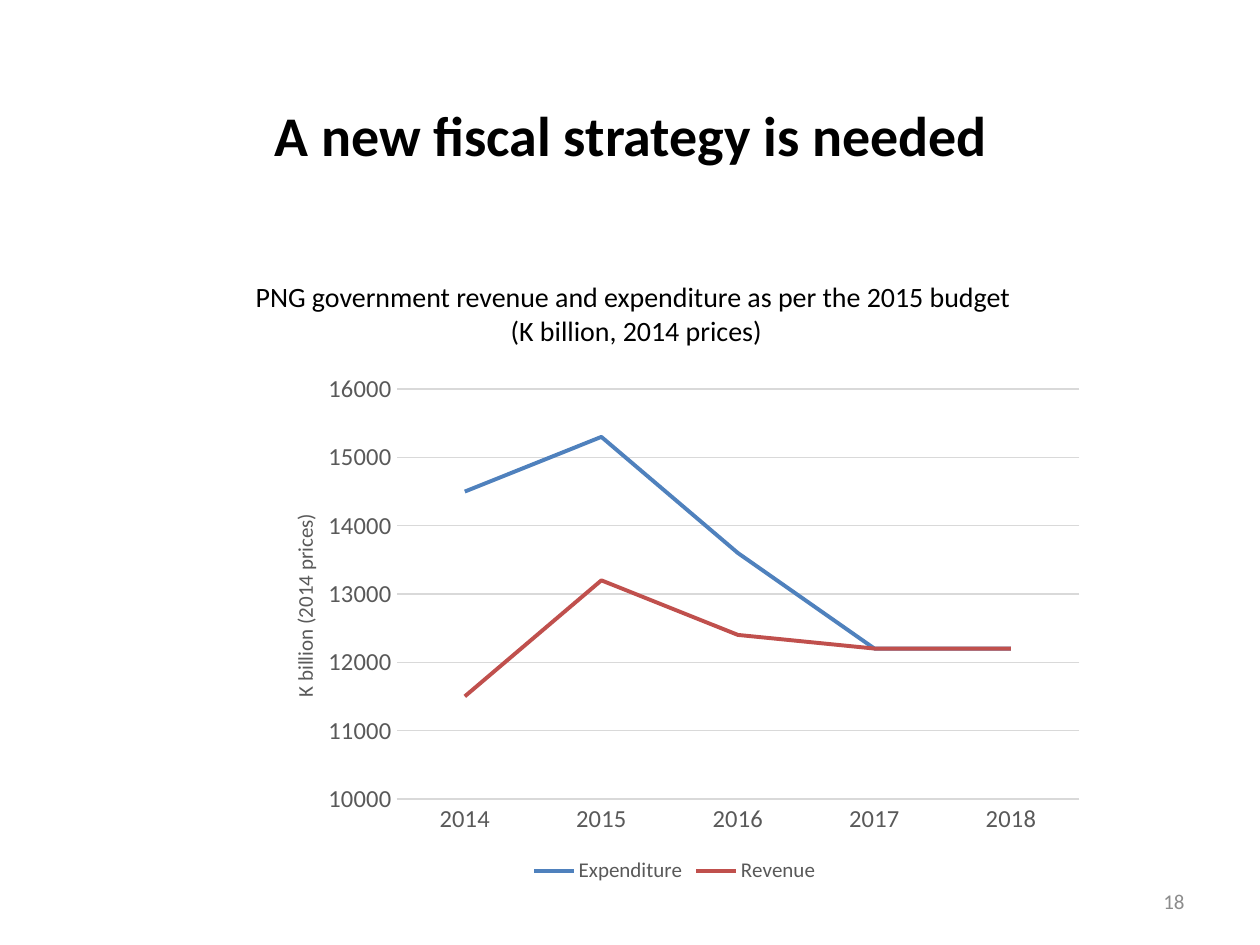
from lxml import etree
from pptx import Presentation
from pptx.chart.data import CategoryChartData
from pptx.dml.color import RGBColor
from pptx.enum.chart import XL_CHART_TYPE, XL_LEGEND_POSITION, XL_TICK_MARK
from pptx.enum.text import MSO_ANCHOR, PP_ALIGN
from pptx.oxml.ns import qn
from pptx.util import Inches, Pt

FONT = "Calibri"
COLORS = {
    "text": "000000",
    "number": "8C8C8C",
    "label": "595959",
    "grid": "D9D9D9",
    "Expenditure": "4F81BD",
    "Revenue": "C0504D",
}
YEARS = ["2014", "2015", "2016", "2017", "2018"]
BUDGET = {
    "Expenditure": [14500, 15300, 13600, 12200, 12200],
    "Revenue": [11500, 13200, 12400, 12200, 12200],
}


def rgb(name):
    return RGBColor.from_string(COLORS[name])


def style_font(font, size, color, bold=False):
    font.name = FONT
    font.size = Pt(size)
    font.bold = bold
    font.color.rgb = rgb(color)


def style_line(line, color, width):
    line.color.rgb = rgb(color)
    line.width = Pt(width)


def add_text(s, box, lines, size, color="text", align=PP_ALIGN.CENTER, bold=False):
    tf = s.shapes.add_textbox(*map(Inches, box)).text_frame
    tf.word_wrap = True
    tf.vertical_anchor = MSO_ANCHOR.MIDDLE
    p = tf.paragraphs[0]
    p.alignment = align
    for i, line in enumerate(lines):
        if i:
            p.add_line_break()
        r = p.add_run()
        r.text = line
        style_font(r.font, size, color, bold)


def set_layout(parent, index, **settings):
    layout = parent.find(qn("c:layout"))
    if layout is None:
        layout = etree.Element(qn("c:layout"))
        parent.insert(index, layout)
    manual = etree.SubElement(layout, qn("c:manualLayout"))
    for tag, value in settings.items():
        etree.SubElement(manual, qn(f"c:{tag}")).set("val", str(value))


def style_category_axis(axis):
    axis.major_tick_mark = axis.minor_tick_mark = XL_TICK_MARK.NONE
    style_font(axis.tick_labels.font, 14, "label")
    style_line(axis.format.line, "grid", 0.75)


def style_value_axis(axis):
    axis.major_tick_mark = axis.minor_tick_mark = XL_TICK_MARK.NONE
    axis.minimum_scale, axis.maximum_scale, axis.major_unit = 10000, 16000, 1000
    style_font(axis.tick_labels.font, 14, "label")
    axis.format.line.fill.background()
    style_line(axis.major_gridlines.format.line, "grid", 0.75)
    title = axis.axis_title
    tf = title.text_frame
    bodyPr = tf._txBody.bodyPr
    bodyPr.set("rot", "-5400000")
    bodyPr.set("vert", "horz")
    r = tf.paragraphs[0].add_run()
    r.text = "K billion (2014 prices)"
    style_font(r.font, 12, "label")
    set_layout(title._element, 1, xMode="edge", yMode="edge", x=0.04, y=0.28)


def add_budget_chart(s, box):
    data = CategoryChartData(number_format="General")
    data.categories = YEARS
    for name, values in BUDGET.items():
        data.add_series(name, values)
    chart = s.shapes.add_chart(XL_CHART_TYPE.LINE, *map(Inches, box), data).chart
    style_font(chart.font, 10, "text")
    chart.has_title = False
    chart.has_legend = True
    chart.legend.position = XL_LEGEND_POSITION.BOTTOM
    chart.legend.include_in_layout = False
    style_font(chart.legend.font, 12, "label")
    style_category_axis(chart.category_axis)
    style_value_axis(chart.value_axis)
    plot = chart.plots[0]
    plot.vary_by_categories = False
    for series in plot.series:
        series.smooth = False
        style_line(series.format.line, series.name, 2.25)
    plot_area = chart._chartSpace.chart.plotArea
    set_layout(plot_area, 0, layoutTarget="inner", xMode="edge", yMode="edge",
               x=0.17, y=0.05, w=0.81, h=0.78)


def main():
    prs = Presentation()
    prs.slide_width, prs.slide_height = Inches(10), Inches(7.5)
    s = prs.slides.add_slide(prs.slide_layouts[6])
    add_text(s, (0.55, 1.86, 9, 1.25),
             ["PNG government revenue and expenditure as per the 2015 budget ",
              "(K billion, 2014 prices)"], 16)
    add_text(s, (0.51, 0.44, 9, 1.25), ["A new fiscal strategy is needed"], 32, bold=True)
    add_text(s, (7.17, 6.95, 2.33, 0.4), ["18"], 12, "number", PP_ALIGN.RIGHT)
    add_budget_chart(s, (2.01, 2.88, 6.69, 4.17))
    prs.save("out.pptx")


if __name__ == "__main__":
    main()
